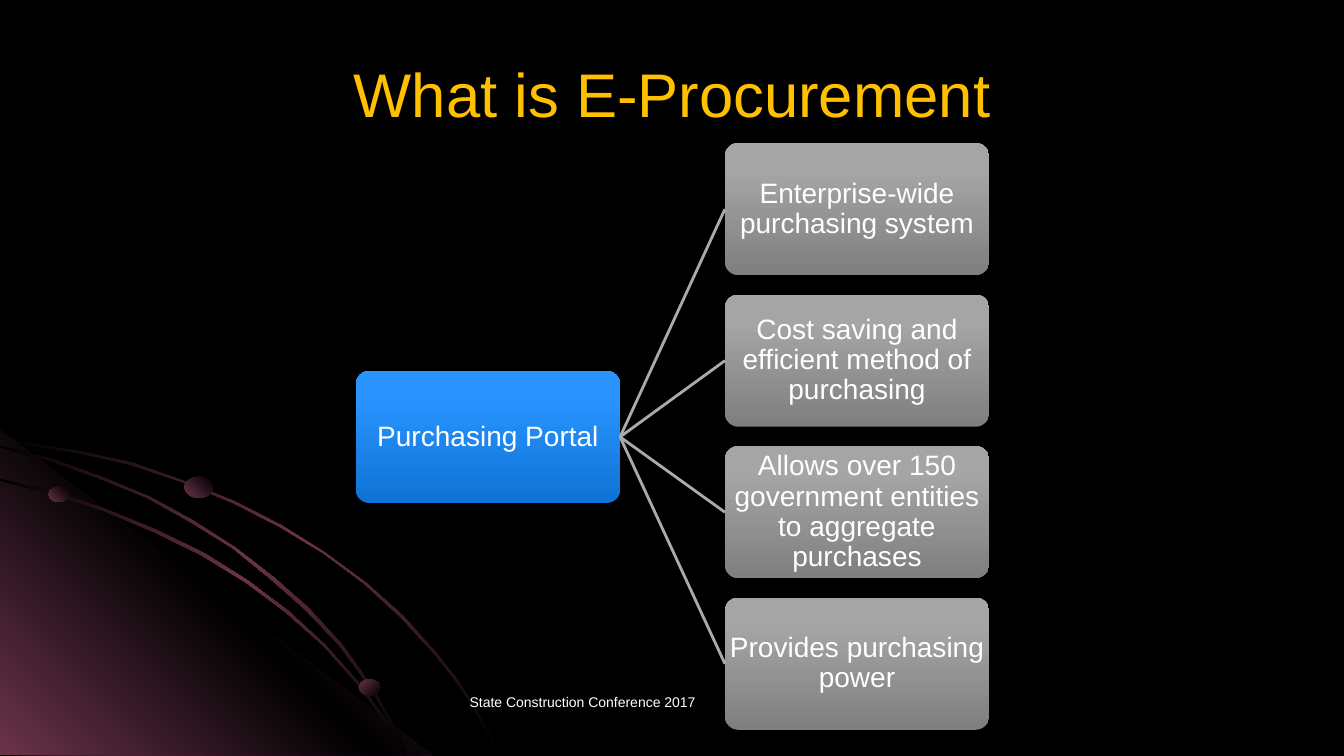
"""Build the "What is E-Procurement" slide."""
from dataclasses import dataclass

from lxml.etree import SubElement
from pptx import Presentation
from pptx.dml.color import RGBColor
from pptx.enum.shapes import MSO_CONNECTOR as CONN, MSO_SHAPE as SHAPE
from pptx.enum.text import MSO_ANCHOR as ANCHOR, PP_ALIGN as ALIGN
from pptx.oxml.ns import qn
from pptx.shapes.autoshape import Shape
from pptx.slide import Slide
from pptx.text.text import TextFrame
from pptx.util import Inches, Pt

COLORS = {
    "black": "000000", "white": "FFFFFF", "gold": "FFC000", "plum": "6B334B",
    "blue": "2994FF", "light_blue": "2B95FF", "dark_blue": "0F72D5",
    "gray": "A5A5A5", "dark_gray": "7F7F7F", "line": "AAAAAA",
}
FONT = "Arial"
BOX_W, BOX_H = 2.62, 1.31
FIRST_TOP, LAST_TOP = 1.42, 5.93


@dataclass(frozen=True)
class Gradient:
    """Colour stops (percent, colour name) and a clockwise angle."""
    stops: tuple[tuple[int, str], ...]
    angle: int


@dataclass(frozen=True)
class Swoosh:
    """A closed outline in hundredths of an inch."""
    points: tuple[tuple[int, int], ...]
    gradient: Gradient


@dataclass(frozen=True)
class Bead:
    """A small ellipse on a swoosh."""
    left: float
    top: float
    width: float
    height: float
    angle: int


@dataclass(frozen=True)
class Box:
    """A rounded box of the tree."""
    text: str
    left: float
    top: float
    gradient: Gradient


ARC = Gradient(((0, "black"), (50, "plum"), (100, "black")), 45)
CORNER = Gradient(((0, "plum"), (50, "black"), (100, "plum")), 315)
BLUE = Gradient(((0, "dark_blue"), (80, "blue"), (100, "light_blue")), 270)
GRAY = Gradient(((0, "dark_gray"), (80, "gray"), (100, "gray")), 270)

SWOOSHES = (
    Swoosh((
        (76, 447), (37, 441), (0, 435), (0, 438), (37, 443), (75, 449), (129, 461),
        (180, 478), (231, 499), (278, 523), (321, 549), (361, 579), (397, 612),
        (431, 649), (450, 673), (467, 698), (481, 723), (493, 749), (496, 749),
        (483, 723), (469, 698), (453, 673), (433, 648), (400, 611), (363, 578),
        (322, 548), (279, 521), (232, 497), (182, 477), (131, 459)), ARC),
    Swoosh(((429, 749), (0, 749), (0, 427)), CORNER),
    Swoosh((
        (380, 714), (392, 732), (401, 749), (404, 749), (394, 730), (382, 712),
        (355, 676), (323, 640), (286, 606), (246, 576), (203, 549), (156, 526),
        (105, 505), (54, 488), (0, 475), (0, 477), (51, 490), (103, 507),
        (153, 528), (200, 551), (244, 578), (284, 608), (321, 641), (353, 677)), ARC),
    Swoosh((
        (0, 442), (0, 444), (49, 457), (99, 475), (146, 494), (189, 518), (231, 544),
        (269, 575), (303, 605), (337, 641), (356, 667), (374, 694), (389, 722),
        (401, 749), (404, 749), (391, 720), (376, 693), (358, 665), (339, 639),
        (306, 603), (272, 573), (233, 543), (191, 516), (149, 493), (101, 473),
        (51, 455)), ARC),
)
BEADS = (
    Bead(0.48, 4.83, 0.2, 0.15, 315),
    Bead(3.56, 6.74, 0.21, 0.16, 45),
    Bead(1.83, 4.73, 0.28, 0.21, 315),
)
ROOT = Box("Purchasing Portal", 3.53, 3.68, BLUE)
BENEFITS = (
    "Enterprise-wide purchasing system",
    "Cost saving and efficient method of purchasing",
    "Allows over 150 government entities to aggregate purchases",
    "Provides purchasing power",
)


def rgb(name: str) -> RGBColor:
    """Return a named colour."""
    return RGBColor.from_string(COLORS[name])


def paint(sp: Shape, gradient: Gradient) -> None:
    """Fill a shape with a gradient, without line or shadow."""
    sp.shadow.inherit = False
    sp.line.fill.background()
    sp.fill.gradient()
    sp.fill.gradient_angle = 360 - gradient.angle
    stops = sp.element.spPr.find(qn("a:gradFill")).find(qn("a:gsLst"))
    for stop in list(stops):
        stops.remove(stop)
    for pos, name in gradient.stops:
        stop = SubElement(stops, qn("a:gs"), pos=str(pos * 1000))
        SubElement(stop, qn("a:srgbClr"), val=COLORS[name])


def write(tf: TextFrame, text: str, size: int, color: str, align: ALIGN) -> None:
    """Write one formatted paragraph."""
    tf.word_wrap = True
    p = tf.paragraphs[0]
    p.text = text
    p.alignment = align
    p.font.name = FONT
    p.font.size = Pt(size)
    p.font.color.rgb = rgb(color)


def draw_swoosh(s: Slide, swoosh: Swoosh) -> None:
    """Draw a background outline."""
    builder = s.shapes.build_freeform(*swoosh.points[0], scale=Inches(0.01))
    builder.add_line_segments(swoosh.points[1:], close=True)
    paint(builder.convert_to_shape(), swoosh.gradient)


def draw_bead(s: Slide, bead: Bead) -> None:
    """Draw a background bead."""
    sp = s.shapes.add_shape(SHAPE.OVAL, Inches(bead.left), Inches(bead.top),
                            Inches(bead.width), Inches(bead.height))
    paint(sp, Gradient(((0, "plum"), (100, "black")), bead.angle))


def draw_box(s: Slide, box: Box) -> Shape:
    """Draw a box of the tree with its text."""
    sp = s.shapes.add_shape(SHAPE.ROUNDED_RECTANGLE, Inches(box.left), Inches(box.top),
                            Inches(BOX_W), Inches(BOX_H))
    sp.adjustments[0] = 0.1
    paint(sp, box.gradient)
    tf = sp.text_frame
    tf.margin_left = tf.margin_right = tf.margin_top = tf.margin_bottom = Inches(0.01)
    tf.vertical_anchor = ANCHOR.MIDDLE
    write(tf, box.text, 20, "white", ALIGN.CENTER)
    tf.paragraphs[0].line_spacing = 0.9
    return sp


def join(s: Slide, parent: Shape, child: Shape) -> None:
    """Connect a parent's right side to a child's left side."""
    line = s.shapes.add_connector(CONN.STRAIGHT, 0, 0, 0, 0)
    line.begin_connect(parent, 3)
    line.end_connect(child, 1)
    line.line.color.rgb = rgb("line")
    line.line.width = Pt(2)
    SubElement(line.element.spPr, qn("a:effectLst"))


def main() -> None:
    """Build and save the slide."""
    prs = Presentation()
    prs.slide_width, prs.slide_height = Inches(13.33), Inches(7.5)
    s = prs.slides.add_slide(prs.slide_layouts[5])
    s.background.fill.solid()
    s.background.fill.fore_color.rgb = rgb("black")
    for swoosh in SWOOSHES:
        draw_swoosh(s, swoosh)
    for bead in BEADS:
        draw_bead(s, bead)

    title = s.shapes.title
    title.left, title.top = Inches(0.67), Inches(0.3)
    title.width, title.height = Inches(12), Inches(1.25)
    title.text_frame.vertical_anchor = ANCHOR.MIDDLE
    write(title.text_frame, "What is E-Procurement", 44, "gold", ALIGN.CENTER)

    root = draw_box(s, ROOT)
    pitch = (LAST_TOP - FIRST_TOP) / (len(BENEFITS) - 1)
    for i, text in enumerate(BENEFITS):
        join(s, root, draw_box(s, Box(text, 7.19, FIRST_TOP + i * pitch, GRAY)))

    footer = s.shapes.add_textbox(Inches(4.56), Inches(6.83), Inches(4.22), Inches(0.5))
    write(footer.text_frame, "State Construction Conference 2017", 10, "white", ALIGN.LEFT)
    prs.save("out.pptx")


if __name__ == "__main__":
    main()
